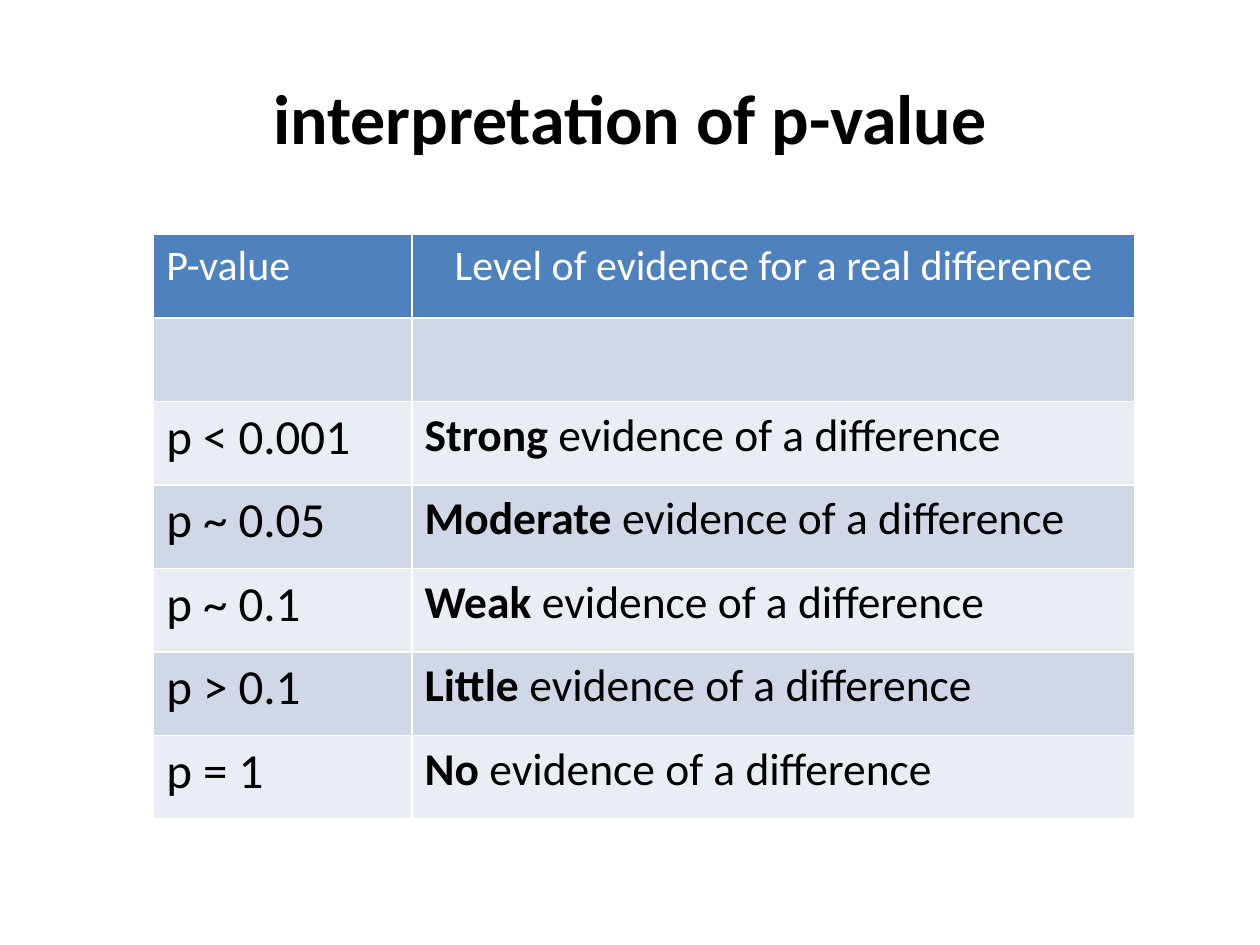
from pptx import Presentation
from pptx.dml.color import RGBColor
from pptx.enum.text import MSO_ANCHOR, PP_ALIGN
from pptx.util import Inches, Pt

CENTER = PP_ALIGN.CENTER
LEFT = PP_ALIGN.LEFT
MIDDLE = MSO_ANCHOR.MIDDLE
TITLE_ONLY = 5
HEADER_FILL = "4F81BD"
BAND_FILLS = ("E9EDF4", "D0D8E8")


def set_font(paragraph, size, color, bold=None):
    paragraph.font.name = "Calibri"
    paragraph.font.size = Pt(size)
    paragraph.font.color.rgb = RGBColor.from_string(color)
    paragraph.font.bold = bold


presentation = Presentation()
presentation.slide_width = Inches(10)
presentation.slide_height = Inches(7.5)
slide = presentation.slides.add_slide(presentation.slide_layouts[TITLE_ONLY])

# Title
title = slide.shapes.title
title.left, title.top = Inches(0.5), Inches(0.3)
title.width, title.height = Inches(9), Inches(1.25)
title.text_frame.text = "interpretation of p-value"
title.text_frame.vertical_anchor = MIDDLE
title_paragraph = title.text_frame.paragraphs[0]
title_paragraph.alignment = CENTER
set_font(title_paragraph, 40, "000000", bold=True)

# Table grid: the default style draws the white borders
evidence_levels = [
    ("p < 0.001", "Strong"),
    ("p ~ 0.05", "Moderate"),
    ("p ~ 0.1", "Weak"),
    ("p > 0.1", "Little"),
    ("p = 1", "No"),
]
row_count = len(evidence_levels) + 2
table = slide.shapes.add_table(
    row_count, 2, Inches(1.22), Inches(1.86), Inches(7.79), Inches(4.64)
).table
table.columns[0].width = Inches(2.05)
table.columns[1].width = Inches(5.74)

# Fills: header, then alternating bands
for row_index, row in enumerate(table.rows):
    color = BAND_FILLS[row_index % 2] if row_index else HEADER_FILL
    for cell in row.cells:
        cell.fill.solid()
        cell.fill.fore_color.rgb = RGBColor.from_string(color)

# Header row
headers = [("P-value", LEFT), ("Level of evidence for a real difference", CENTER)]
for column_index, (text, alignment) in enumerate(headers):
    cell = table.cell(0, column_index)
    cell.text = text
    paragraph = cell.text_frame.paragraphs[0]
    paragraph.alignment = alignment
    set_font(paragraph, 24, "FFFFFF", bold=False)
    paragraph.runs[0].font.bold = False

# Evidence rows, below one empty row
for row_index, (p_value, level) in enumerate(evidence_levels, start=2):
    value_cell, level_cell = table.rows[row_index].cells
    value_cell.text = p_value
    set_font(value_cell.text_frame.paragraphs[0], 28, "000000")

    paragraph = level_cell.text_frame.paragraphs[0]
    set_font(paragraph, 26, "000000")
    level_run = paragraph.add_run()
    level_run.text = level
    level_run.font.bold = True
    paragraph.add_run().text = " evidence of a difference"

presentation.save("out.pptx")
